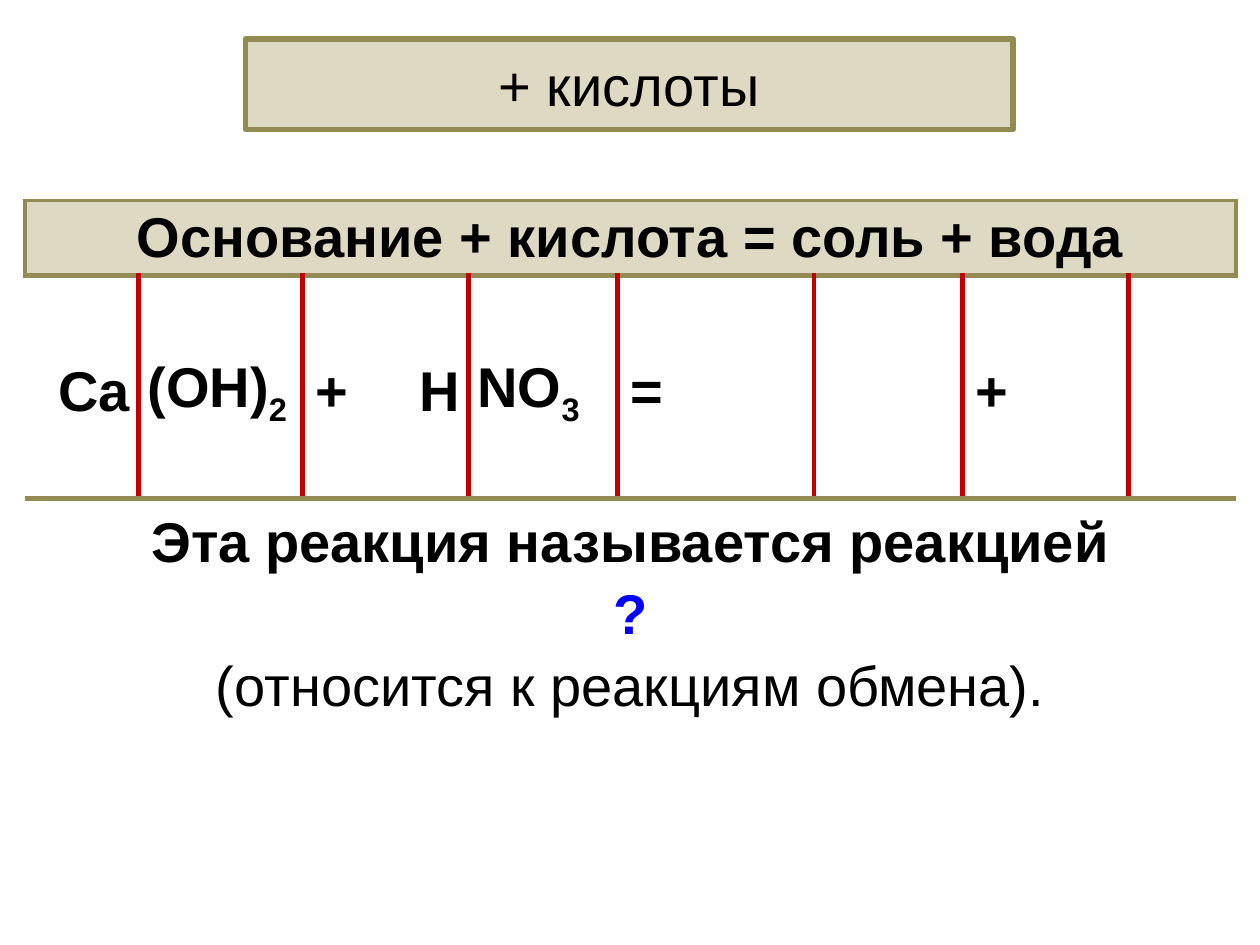
from dataclasses import dataclass

from lxml.etree import SubElement
from pptx import Presentation
from pptx.dml.color import RGBColor
from pptx.enum.text import MSO_ANCHOR, MSO_AUTO_SIZE, PP_ALIGN
from pptx.oxml.ns import qn
from pptx.util import Inches, Pt


@dataclass(frozen=True)
class Theme:
    font: str = "Arial"
    size: int = 32
    ink: str = "000000"
    sand: str = "DDD9C3"
    olive: str = "948A54"
    red: str = "C00000"
    blue: str = "0000FF"
    thin: float = 2.25
    thick: float = 3
    plain: str = "{2D5ABB26-0587-4C30-8999-92F81FD0307C}"


T = Theme()
LEFT, MID, RIGHT = PP_ALIGN.LEFT, PP_ALIGN.CENTER, PP_ALIGN.RIGHT
COLS = (0.9, 1.3, 0.47, 0.85, 1.18, 0.47, 1.09, 1.18, 0.47, 0.85, 0.85)
ROWS = (0.48, 1.77, 1.77)

# Column: text, subscript, alignment
TERMS = {
    0: ("Ca", "", RIGHT),
    1: ("(OH)", "2", LEFT),
    2: ("+", "", MID),
    3: ("H", "", RIGHT),
    4: ("NO", "3", LEFT),
    5: ("=", "", MID),
    8: ("+", "", MID),
}
SPLITS = (1, 4, 7, 10)  # columns with a red line on their left
NOTES = (
    ("Эта реакция называется реакцией", T.ink, True),
    ("?", T.blue, True),
    ("(относится к реакциям обмена).", T.ink, False),
)


def write(par, text, sub="", align=MID, color=T.ink, bold=True, space=None):
    """Fill a paragraph, with an optional subscript at its end."""
    par.alignment = align
    if space:
        par.line_spacing = space
    for part, base in ((text, None), (sub, "-25000")):
        if not part:
            continue
        run = par.add_run()
        run.text = part
        font = run.font
        font.name, font.size, font.bold = T.font, Pt(T.size), bold
        font.color.rgb = RGBColor.from_string(color)
        if base:
            font._element.set("baseline", base)


def edge(cell, **sides):
    """Draw cell borders; each side is given as (colour, width)."""
    props = cell._tc.get_or_add_tcPr()
    names = [side for side in "LRTB" if side in sides]
    for spot, side in enumerate(names):
        color, width = sides[side]
        line = SubElement(props, qn(f"a:ln{side}"), w=str(Pt(width)))
        fill = SubElement(line, qn("a:solidFill"))
        SubElement(fill, qn("a:srgbClr"), val=color)
        props.insert(spot, line)


def pad(cell):
    cell.vertical_anchor = MSO_ANCHOR.MIDDLE
    cell.margin_left = cell.margin_right = Inches(0.07)
    cell.margin_top = cell.margin_bottom = 0


def title(slide, box):
    shape = slide.shapes.title
    shape.left, shape.top, shape.width, shape.height = box
    shape.fill.solid()
    shape.fill.fore_color.rgb = RGBColor.from_string(T.sand)
    shape.line.color.rgb = RGBColor.from_string(T.olive)
    shape.line.width = Pt(T.thick)
    frame = shape.text_frame
    frame.auto_size = MSO_AUTO_SIZE.NONE
    frame.vertical_anchor = MSO_ANCHOR.MIDDLE
    write(frame.paragraphs[0], "+ кислоты", bold=False)


def header(table):
    last = len(COLS) - 1
    table.cell(0, 0).merge(table.cell(0, last))
    for col in range(last + 1):
        cell = table.cell(0, col)
        cell.fill.solid()
        cell.fill.fore_color.rgb = RGBColor.from_string(T.sand)
        sides = {"T": (T.olive, T.thin), "B": (T.olive, T.thick)}
        if col == 0:
            sides["L"] = (T.olive, T.thin)
        if col in (0, last):
            sides["R"] = (T.olive, T.thin)
        edge(cell, **sides)
    write(table.cell(0, 0).text_frame.paragraphs[0],
          "Основание + кислота = соль + вода")


def formula(table):
    for col in range(len(COLS)):
        cell = table.cell(1, col)
        cell.fill.background()
        pad(cell)
        sides = {"T": (T.olive, T.thick)}
        if col in SPLITS:
            sides["L"] = (T.red, T.thick)
        if col + 1 in SPLITS:
            sides["R"] = (T.red, T.thick)
        edge(cell, **sides)
        if col in TERMS:
            text, sub, align = TERMS[col]
            write(cell.text_frame.paragraphs[0], text, sub=sub,
                  align=align, space=1.15)


def notes(table):
    cell = table.cell(2, 0)
    cell.merge(table.cell(2, len(COLS) - 1))
    cell.fill.background()
    pad(cell)
    frame = cell.text_frame
    for num, (text, color, bold) in enumerate(NOTES):
        par = frame.add_paragraph() if num else frame.paragraphs[0]
        write(par, text, color=color, bold=bold, space=1.15)


def scheme(slide, box):
    left, top, width, high = box
    holder = slide.shapes.add_table(len(ROWS), len(COLS), *box)
    table = holder.table
    table.first_row = table.horz_banding = False
    table._tbl.tblPr.find(qn("a:tableStyleId")).text = T.plain
    for col, share in zip(table.columns, COLS):
        col.width = int(width * share / sum(COLS))
    for row, size in zip(table.rows, ROWS):
        row.height = Inches(size)
    header(table)
    formula(table)
    notes(table)
    holder.height = high


def main():
    deck = Presentation()
    deck.slide_width, deck.slide_height = Inches(10), Inches(7.5)
    slide = deck.slides.add_slide(deck.slide_layouts[5])
    # Title bar, then the reaction table
    title(slide, [Inches(n) for n in (1.95, 0.31, 6.09, 0.72)])
    scheme(slide, [Inches(n) for n in (0.2, 1.59, 9.61, 4.31)])
    deck.save("out.pptx")


if __name__ == "__main__":
    main()
